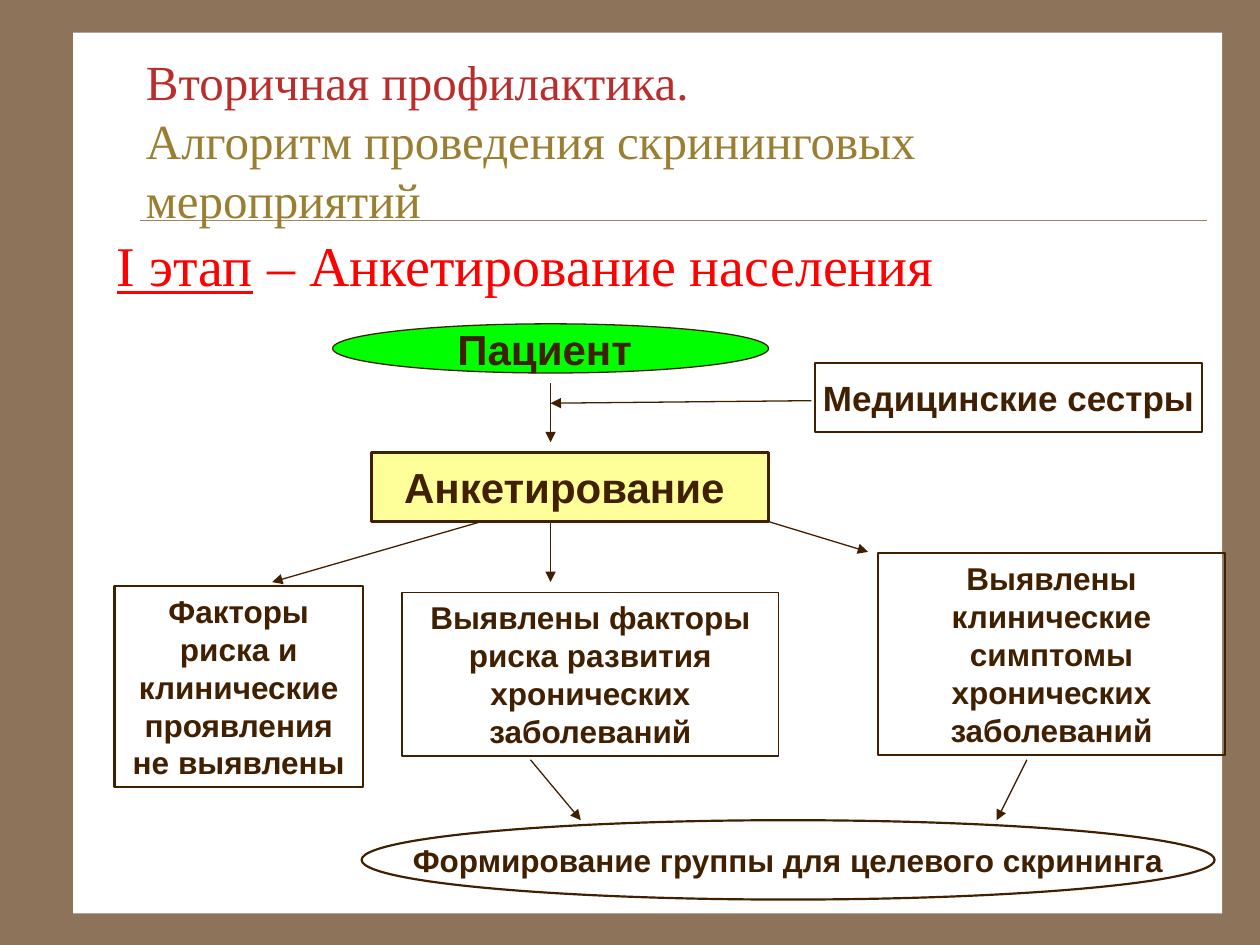
import pptx
import pptx.util
import pptx.dml.color
import pptx.enum.shapes
import pptx.enum.text
import pptx.oxml
import pptx.oxml.ns
from pptx.util import Inches

RGBColor = pptx.dml.color.RGBColor
SHAPE = pptx.enum.shapes.MSO_SHAPE
ANCHOR = pptx.enum.text.MSO_ANCHOR
ALIGN = pptx.enum.text.PP_ALIGN

TAUPE = RGBColor(0x8C, 0x73, 0x5A)
RULE = RGBColor(0xA0, 0x83, 0x66)
WHITE = RGBColor(0xFF, 0xFF, 0xFF)
CRIMSON = RGBColor(0xBA, 0x2D, 0x2D)
OLIVE = RGBColor(0x9A, 0x7F, 0x32)
RED = RGBColor(0xFF, 0x00, 0x00)
BROWN = RGBColor(0x40, 0x20, 0x00)
GREEN = RGBColor(0x00, 0xFF, 0x00)
YELLOW = RGBColor(0xFF, 0xFF, 0x99)

TITLE = [("Вторичная профилактика.", CRIMSON),
         ("Алгоритм проведения скрининговых мероприятий", OLIVE)]
STAGE = [("I этап", True), (" – Анкетирование населения", False)]

NODES = [
    ("Пациент ", SHAPE.OVAL, (2.64, 2.57, 3.46, 0.39), GREEN, 0.75, 24, False),
    ("Медицинские сестры", SHAPE.RECTANGLE, (6.47, 2.88, 3.07, 0.55), None, 1.5, 20, False),
    ("Анкетирование ", SHAPE.RECTANGLE, (2.95, 3.59, 3.15, 0.55), YELLOW, 1.5, 24, False),
    ("Факторы риска и клинические проявления не выявлены",
     SHAPE.RECTANGLE, (0.91, 4.65, 1.97, 1.6), None, 1.25, 18, True),
    ("Выявлены факторы риска развития хронических заболеваний",
     SHAPE.RECTANGLE, (3.19, 4.7, 2.99, 1.3), None, 0.75, 18, True),
    ("Выявлены клинические симптомы хронических заболеваний",
     SHAPE.RECTANGLE, (6.97, 4.39, 2.75, 1.6), None, 1.25, 18, True),
    ("Формирование группы для целевого скрининга",
     SHAPE.OVAL, (2.87, 6.51, 6.77, 0.63), None, 1.25, 18, False),
]

ARROWS = [
    ((4.37, 3.04), (4.37, 3.51)),
    ((6.44, 3.18), (4.37, 3.2)),
    ((3.82, 4.14), (2.16, 4.62)),
    ((4.37, 4.14), (4.37, 4.62)),
    ((6.1, 4.14), (6.89, 4.38)),
    ((4.21, 6.03), (4.61, 6.51)),
    ((8.15, 6.03), (7.91, 6.51)),
]


def add_run(p, text, font, size, color, bold=False, underline=False):
    r = p.add_run()
    r.text = text
    r.font.name = font
    r.font.size = pptx.util.Pt(size)
    r.font.color.rgb = color
    r.font.bold = bold
    r.font.underline = underline


def add_box(s, kind, box, fill, line=None, width=0):
    sp = s.shapes.add_shape(kind, *map(Inches, box))
    sp.shadow.inherit = False
    if fill is None:
        sp.fill.background()
    else:
        sp.fill.solid()
        sp.fill.fore_color.rgb = fill
    if line is None:
        sp.line.fill.background()
    else:
        sp.line.color.rgb = line
        sp.line.width = pptx.util.Pt(width)
    return sp


def add_node(s, text, kind, box, fill, width, size, wrap):
    tf = add_box(s, kind, box, fill, BROWN, width).text_frame
    tf.word_wrap = wrap
    tf.vertical_anchor = ANCHOR.MIDDLE
    p = tf.paragraphs[0]
    p.alignment = ALIGN.CENTER
    add_run(p, text, "Arial", size, BROWN, bold=True)


def add_line(s, start, end, color, width, arrow=False):
    ends = map(Inches, (*start, *end))
    cx = s.shapes.add_connector(pptx.enum.shapes.MSO_CONNECTOR.STRAIGHT, *ends)
    cx.line.color.rgb = color
    cx.line.width = pptx.util.Pt(width)
    if arrow:
        tail = pptx.oxml.ns.qn("a:tailEnd")
        cx.line._get_or_add_ln().append(
            pptx.oxml.parse_xml(f'<a:tailEnd {pptx.oxml.ns.nsdecls("a")} type="triangle"/>'))
    cx._element.spPr.append(
        pptx.oxml.parse_xml(f'<a:effectLst {pptx.oxml.ns.nsdecls("a")}/>'))


def add_text(s, box, anchor):
    tf = s.shapes.add_textbox(*map(Inches, box)).text_frame
    tf.word_wrap = True
    tf.vertical_anchor = anchor
    return tf.paragraphs[0]


def main():
    prs = pptx.Presentation()
    prs.slide_width, prs.slide_height = Inches(10), Inches(7.5)
    s = prs.slides.add_slide(prs.slide_layouts[6])
    s.background.fill.solid()
    s.background.fill.fore_color.rgb = TAUPE

    add_box(s, SHAPE.RECTANGLE, (0.58, 0.26, 9.12, 6.99), WHITE)
    add_line(s, (1.11, 1.75), (9.58, 1.75), RULE, 0.25)

    p = add_text(s, (1.06, 0.44, 8.42, 1.34), ANCHOR.MIDDLE)
    for i, (text, color) in enumerate(TITLE):
        if i:
            p.add_line_break()
        add_run(p, text, "Times New Roman", 28, color)

    p = add_text(s, (0.83, 1.78, 8.67, 4.64), ANCHOR.TOP)
    for text, underline in STAGE:
        add_run(p, text, "Times New Roman", 32, RED, underline=underline)

    for node in NODES:
        add_node(s, *node)
    for start, end in ARROWS:
        add_line(s, start, end, BROWN, 0.75, arrow=True)

    prs.save("out.pptx")


if __name__ == "__main__":
    main()
